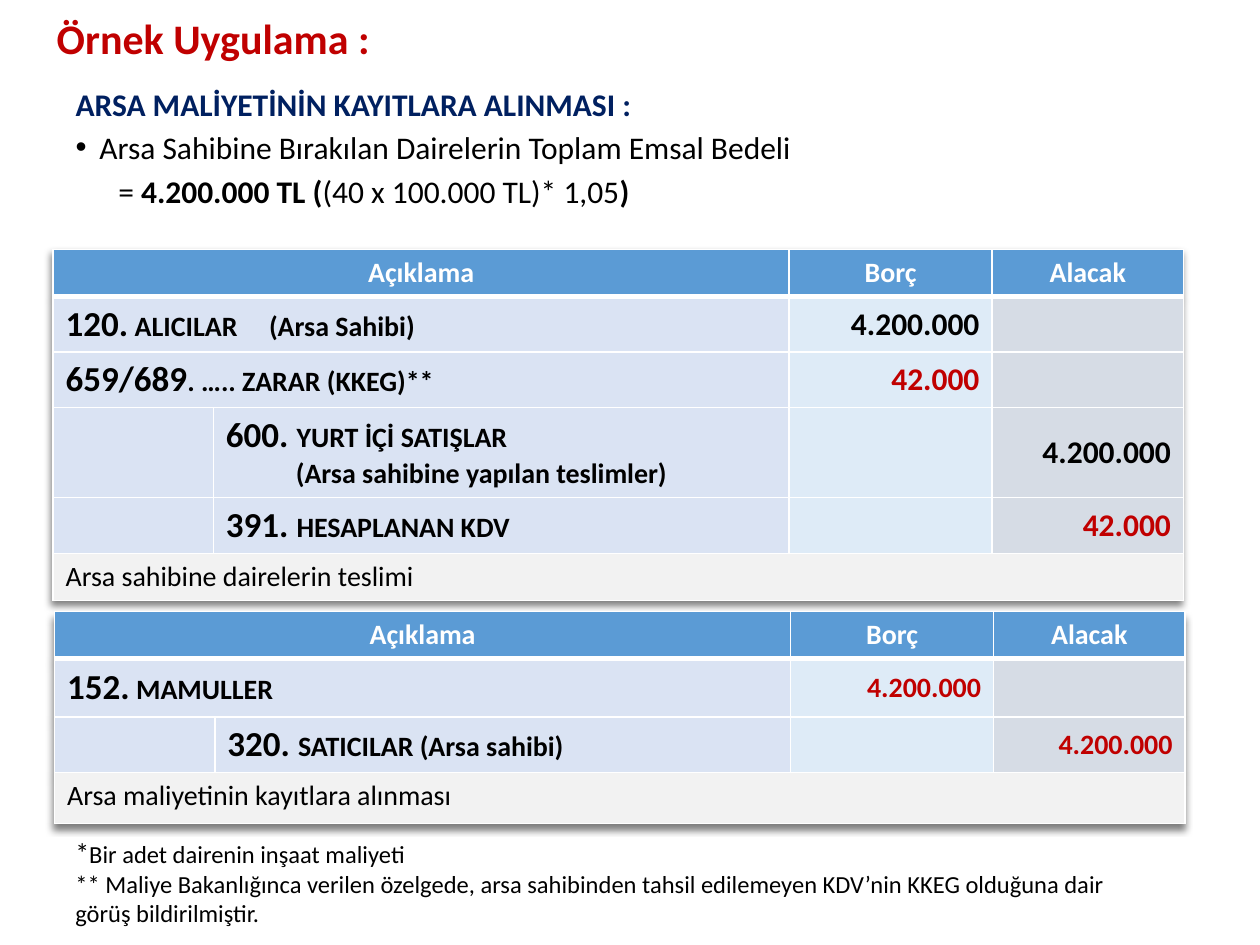
from lxml.etree import SubElement as Sub
from pptx import Presentation
from pptx.dml.color import RGBColor
from pptx.enum.text import MSO_ANCHOR as Anchor, MSO_AUTO_SIZE as Fit, PP_ALIGN as Align
from pptx.oxml.ns import qn
from pptx.util import Cm, Pt

RED = RGBColor(0xC0, 0x00, 0x00)
NAVY = RGBColor(0x00, 0x20, 0x60)
BLACK = RGBColor(0x00, 0x00, 0x00)
WHITE = RGBColor(0xFF, 0xFF, 0xFF)
BLUE = RGBColor(0x5B, 0x9B, 0xD5)
LILAC = RGBColor(0xDA, 0xE3, 0xF3)
PALE = RGBColor(0xDE, 0xEB, 0xF7)
GREY = RGBColor(0xD6, 0xDC, 0xE5)
LIGHT = RGBColor(0xF2, 0xF2, 0xF2)


def write(par, runs, size, color=BLACK, bold=False, align=Align.LEFT):
    """Fill a paragraph; each run is (text, own settings)."""
    par.alignment = align
    font = par.font
    font.name, font.size, font.bold = "Calibri", Pt(size), bold
    font.color.rgb = color
    for text, own in runs:
        run = par.add_run()
        run.text = text
        if "size" in own:
            run.font.size = Pt(own["size"])
        if "bold" in own:
            run.font.bold = own["bold"]


def edge(cell, top, low):
    """Give a cell white borders, with the top and bottom widths in points."""
    props = cell._tc.get_or_add_tcPr()
    for side, width in (("L", 1), ("R", 1), ("T", top), ("B", low)):
        line = Sub(props, qn(f"a:ln{side}"), w=str(Pt(width)))
        Sub(Sub(line, qn("a:solidFill")), qn("a:srgbClr"), val=str(WHITE))


prs = Presentation()
prs.slide_width, prs.slide_height = Cm(25.4), Cm(19.05)
slide = prs.slides.add_slide(prs.slide_layouts[1])

# Title
title = slide.shapes.title
title.left, title.top, title.width, title.height = Cm(0.89), Cm(0.33), Cm(22.86), Cm(0.97)
frame = title.text_frame
frame.auto_size, frame.vertical_anchor = Fit.NONE, Anchor.MIDDLE
write(frame.paragraphs[0], [("Örnek Uygulama :", {})], 24, RED, True)
frame.paragraphs[0].line_spacing = 0.9

# Body: heading, bullet, indented sum
body = slide.placeholders[1]
body.left, body.top, body.width, body.height = Cm(1.27), Cm(1.73), Cm(22.86), Cm(2.8)
frame = body.text_frame
frame.auto_size = Fit.NONE
lines = [
    ([("ARSA MALİYETİNİN KAYITLARA ALINMASI :", {})], NAVY, True, 0, 0),
    ([("Arsa Sahibine Bırakılan Dairelerin Toplam Emsal Bedeli", {})], BLACK, False, 0.48, -0.48),
    ([("= ", {}), ("4.200.000 TL (", {"bold": True}), ("(40 x 100.000 TL)* 1,05", {}),
      (")", {"bold": True})], BLACK, False, 0.86, 0),
]
for i, (runs, color, bold, left, first) in enumerate(lines):
    par = frame.paragraphs[0] if i == 0 else frame.add_paragraph()
    write(par, runs, 18, color, bold)
    par.line_spacing, par.space_before = 0.8, Pt(7.5)
    props = par._p.get_or_add_pPr()
    props.set("marL", str(Cm(left)))
    props.set("indent", str(Cm(first)))
    mark = props.makeelement(qn("a:buChar"), {"char": "•"}) if first else \
        props.makeelement(qn("a:buNone"), {})
    props.find(qn("a:defRPr")).addprevious(mark)

# Ledgers: row = height, account, name, second line, debit, credit, colour
cols = [3.23, 11.61, 4.09, 3.86]
heads = ["Açıklama", "", "Borç", "Alacak"]
ledgers = [
    (1.07, 5.03, 0.95, 18, [
        (1.11, "120.", " ALICILAR\t(Arsa Sahibi)", "", "4.200.000", "", BLACK),
        (1.11, "659/689", ". ….. ZARAR (KKEG)**", "", "42.000", "", RED),
        (1.81, "600. ", "YURT İÇİ SATIŞLAR", "(Arsa sahibine yapılan teslimler)",
         "", "4.200.000", BLACK),
        (1.13, "391. ", "HESAPLANAN KDV", "", "", "42.000", RED),
    ], 0.95, "Arsa sahibine dairelerin teslimi"),
    (1.1, 12.33, 0.95, 16, [
        (1.17, "152.", " MAMULLER", "", "4.200.000", "", RED),
        (1.11, "320. ", "SATICILAR (Arsa sahibi)", "", "", "4.200.000", RED),
    ], 1.03, "Arsa maliyetinin kayıtlara alınması"),
]
for left, top, high, size, rows, low, note in ledgers:
    tall = [high] + [row[0] for row in rows] + [low]
    last = len(tall) - 1
    table = slide.shapes.add_table(len(tall), 4, Cm(left), Cm(top),
                                   Cm(sum(cols)), Cm(sum(tall))).table
    table.horz_banding = False
    for col, width in zip(table.columns, cols):
        col.width = Cm(width)
    glow = table._tbl.tblPr.makeelement(qn("a:effectLst"), {})
    table._tbl.tblPr.insert(0, glow)
    shade = Sub(glow, qn("a:outerShdw"), blurRad=str(Pt(4)), dist=str(Pt(3)),
                dir="6600000", algn="t", rotWithShape="0")
    black = Sub(shade, qn("a:srgbClr"), val=str(BLACK))
    Sub(black, qn("a:alpha"), val="50000")

    for r, height in enumerate(tall):
        table.rows[r].height = Cm(height)
        for c, tint in enumerate([LILAC, LILAC, PALE, GREY]):
            cell = table.cell(r, c)
            edge(cell, 3 if r == 1 else 1, 3 if r == 0 else 1)
            cell.fill.solid()
            cell.fill.fore_color.rgb = BLUE if r == 0 else LIGHT if r == last else tint
            cell.vertical_anchor = Anchor.TOP if r == last else Anchor.MIDDLE
            par = cell.text_frame.paragraphs[0]
            if r == 0:
                write(par, [(heads[c], {})] if heads[c] else [], 16, WHITE, True, Align.CENTER)
            elif r == last:
                write(par, [(note, {})] if c == 0 else [], 16)
            else:
                _, code, name, extra, debit, credit, color = rows[r - 1]
                if c > 1:
                    sum_text = debit if c == 2 else credit
                    write(par, [(sum_text, {})] if sum_text else [], size, color, True, Align.RIGHT)
                elif c == (0 if debit else 1):
                    write(par, [(code, {"size": 20}), (name, {})], 16, bold=True)
                    if "\t" in name:
                        tabs = par._p.pPr.makeelement(qn("a:tabLst"), {})
                        Sub(tabs, qn("a:tab"), pos=str(Cm(4.1)), algn="l")
                        par._p.pPr.find(qn("a:defRPr")).addprevious(tabs)
                    if extra:
                        par = cell.text_frame.add_paragraph()
                        write(par, [(extra, {})], 16, bold=True)
                        par._p.pPr.set("marL", str(Cm(1.41)))
                else:
                    write(par, [], 16)
        if r == last:
            table.cell(r, 0).merge(table.cell(r, 3))
        elif r == 0 or rows[r - 1][4]:
            table.cell(r, 0).merge(table.cell(r, 1))

# Footnotes
notes = slide.shapes.add_textbox(Cm(1.27), Cm(16.71), Cm(22.23), Cm(2.13)).text_frame
notes.word_wrap = True
write(notes.paragraphs[0], [("*", {"size": 16}), ("Bir adet dairenin inşaat maliyeti", {})], 14)
write(notes.add_paragraph(), [(
    "** Maliye Bakanlığınca verilen özelgede, arsa sahibinden tahsil edilemeyen KDV’nin "
    "KKEG olduğuna dair görüş bildirilmiştir.", {})], 14)

prs.save("out.pptx")
